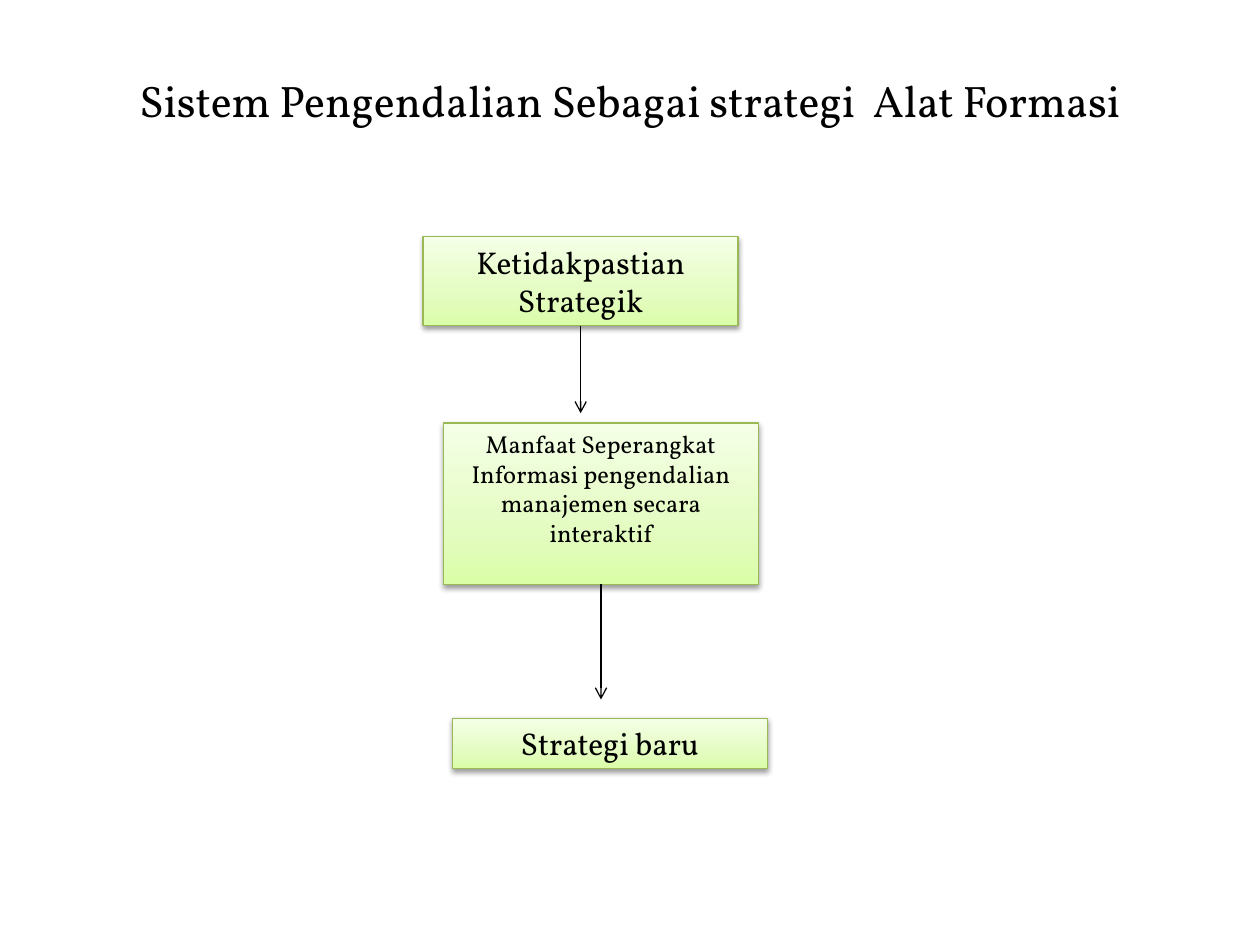
from lxml.etree import SubElement
from pptx import Presentation
from pptx.dml.color import RGBColor
from pptx.enum.shapes import MSO_CONNECTOR as Connector, MSO_SHAPE as Shape
from pptx.enum.text import MSO_ANCHOR as Anchor, MSO_AUTO_SIZE as AutoSize, PP_ALIGN as Align
from pptx.oxml import parse_xml
from pptx.oxml.ns import nsdecls, qn
from pptx.util import Cm, Pt

BLACK = RGBColor(0x00, 0x00, 0x00)
BORDER = RGBColor(0x98, 0xB9, 0x55)
GREEN = RGBColor(0xDA, 0xFD, 0xA7)
PALE_GREEN = RGBColor(0xE4, 0xFC, 0xC2)
LIGHT_GREEN = RGBColor(0xF5, 0xFF, 0xE7)
GRADIENT = ((0, GREEN), (35, PALE_GREEN), (100, LIGHT_GREEN))
FONT = "Vollkorn"
BOX_WIDTH = 6.35
STEPS = (
    ("Ketidakpastian Strategik", 8.53, 4.77, 1.8, 18),
    ("Manfaat Seperangkat Informasi pengendalian manajemen secara interaktif",
     8.94, 8.53, 3.25, 14),
    ("Strategi baru", 9.12, 14.48, 1.02, 18),
)
ARROW_ENDS = (8.33, 14.1)


def apply_format(target, values):
    """Set each attribute of the target from a dict."""
    for name, value in values.items():
        setattr(target, name, value)


def write_text(shape, text, size, anchor):
    """Put one centred paragraph in the shape and return it."""
    frame = shape.text_frame
    frame.text = text
    apply_format(frame, {"word_wrap": True, "auto_size": AutoSize.NONE,
                         "vertical_anchor": anchor})
    paragraph = frame.paragraphs[0]
    paragraph.alignment = Align.CENTER
    font = paragraph.runs[0].font
    apply_format(font, {"name": FONT, "size": Pt(size)})
    font.color.rgb = BLACK
    return paragraph


def add_title(slide, text):
    """Place and format the title placeholder."""
    title = slide.shapes.title
    apply_format(title, {"left": Cm(1.9), "top": Cm(0.84),
                         "width": Cm(21.6), "height": Cm(2.34)})
    paragraph = write_text(title, text, 25.2, Anchor.MIDDLE)
    indent = Cm(0.97)
    properties = paragraph._p.get_or_add_pPr()
    properties.set("marL", str(indent))
    properties.set("indent", str(-indent))


def fill_gradient(shape):
    """Fill the shape with green stops running from bottom to top."""
    stops = "".join(
        f'<a:gs pos="{position * 1000}"><a:srgbClr val="{color}"/></a:gs>'
        for position, color in GRADIENT)
    gradient = parse_xml(
        f'<a:gradFill {nsdecls("a")} rotWithShape="1"><a:gsLst>{stops}</a:gsLst>'
        '<a:lin ang="16200000" scaled="1"/></a:gradFill>')
    shape._element.spPr.find(qn("a:prstGeom")).addnext(gradient)


def add_shadow(shape):
    """Give the shape a soft shadow below it."""
    shape.shadow.inherit = False
    effects = shape._element.spPr.find(qn("a:effectLst"))
    shadow = SubElement(effects, qn("a:outerShdw"), blurRad=str(Pt(3.1)),
                        dist=str(Pt(1.6)), dir="5400000", rotWithShape="0")
    color = SubElement(shadow, qn("a:srgbClr"), val=str(BLACK))
    SubElement(color, qn("a:alpha"), val="38000")


def add_step(slide, text, left, top, height, size):
    """Add one box of the flow."""
    box = slide.shapes.add_shape(Shape.RECTANGLE, Cm(left), Cm(top),
                                 Cm(BOX_WIDTH), Cm(height))
    fill_gradient(box)
    box.line.color.rgb = BORDER
    box.line.width = Pt(0.75)
    add_shadow(box)
    write_text(box, text, size, Anchor.TOP)
    return box


def add_arrow(slide, box, end):
    """Add a downward arrow from the middle of the box's lower side."""
    center = box.left + box.width // 2
    arrow = slide.shapes.add_connector(Connector.STRAIGHT, center,
                                       box.top + box.height, center, Cm(end))
    arrow.begin_connect(box, 2)
    arrow.line.color.rgb = BLACK
    arrow.line.width = Pt(0.75)
    SubElement(arrow.line._get_or_add_ln(), qn("a:tailEnd"), type="arrow")
    SubElement(arrow._element.spPr, qn("a:effectLst"))


def main():
    """Build the slide and save it."""
    presentation = Presentation()
    apply_format(presentation, {"slide_width": Cm(25.4), "slide_height": Cm(19.05)})
    slide = presentation.slides.add_slide(presentation.slide_layouts[5])
    add_title(slide, "Sistem Pengendalian Sebagai strategi  Alat Formasi")
    boxes = [add_step(slide, *step) for step in STEPS]
    for box, end in zip(boxes, ARROW_ENDS):
        add_arrow(slide, box, end)
    presentation.save("out.pptx")


if __name__ == "__main__":
    main()
